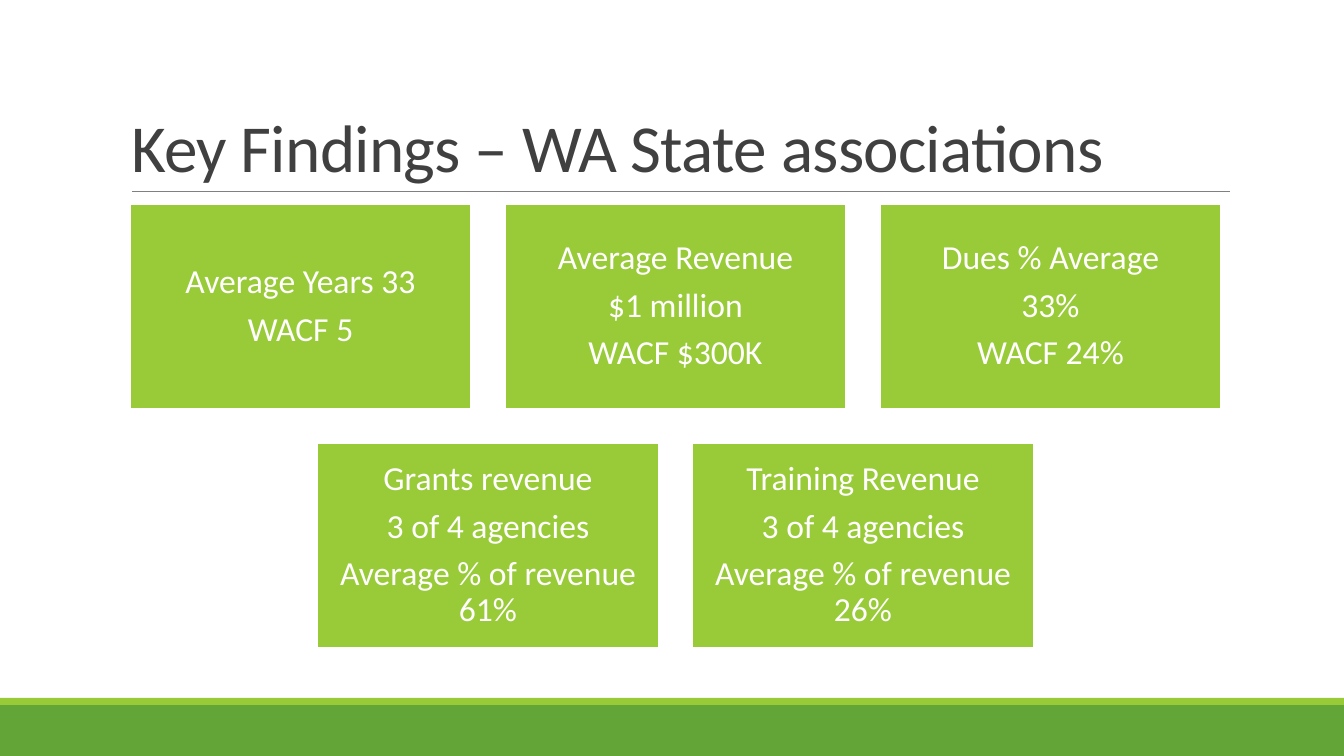
from pptx import Presentation
from pptx import util as u
from pptx.dml.color import RGBColor
from pptx.enum import shapes, text
from pptx.oxml.ns import qn
from lxml import etree

PX = 914400 / 100.8
W, H = 1344, 756
FONT = "Calibri"
COLORS = {"green": "63A537", "lime": "99CB38", "rule": "808080",
          "title": "404040", "white": "FFFFFF"}
CARD_W, CARD_H, GAP = 341, 205, 34
CARD_ROWS = [
    [["Average Years 33", "WACF 5"],
     ["Average Revenue", "$1 million", "WACF $300K"],
     ["Dues % Average", "33%", "WACF 24%"]],
    [["Grants revenue", "3 of 4 agencies", "Average % of revenue 61%"],
     ["Training Revenue", "3 of 4 agencies", "Average % of revenue 26%"]],
]


def px(n):
    return u.Emu(round(n * PX))


def color(name):
    return RGBColor.from_string(COLORS[name])


def set_font(p, size, name):
    p.font.name = FONT
    p.font.size = u.Pt(size)
    p.font.color.rgb = color(name)


def add_rect(s, x, y, w, h, fill, line=None):
    sp = s.shapes.add_shape(shapes.MSO_SHAPE.RECTANGLE, px(x), px(y), px(w), px(h))
    sp.shadow.inherit = False
    sp.fill.solid()
    sp.fill.fore_color.rgb = color(fill)
    if line:
        sp.line.color.rgb = color(line)
        sp.line.width = u.Pt(1.25)
    else:
        sp.line.fill.background()
    return sp


def add_footer(s, x, y, w, h):
    stripe = 7
    add_rect(s, x, y + stripe, w, h - stripe, "green")
    add_rect(s, x, y, w, stripe, "lime")


def add_title(s, x, y, w, h, title):
    # Title text
    sp = s.shapes.title
    sp.left, sp.top, sp.width, sp.height = px(x), px(y), px(w), px(h)
    tf = sp.text_frame
    tf.text = title
    tf.word_wrap = True
    tf.auto_size = text.MSO_AUTO_SIZE.NONE
    tf.vertical_anchor = text.MSO_ANCHOR.BOTTOM
    p = tf.paragraphs[0]
    p.alignment = text.PP_ALIGN.LEFT
    p.line_spacing = 0.85
    set_font(p, 48, "title")
    p.runs[0].font._element.set("spc", "-50")

    # Rule under the title
    rule = s.shapes.add_connector(shapes.MSO_CONNECTOR.STRAIGHT,
                                  px(x + 11), px(y + h), px(x + w + 1), px(y + h))
    rule.line.color.rgb = color("rule")
    rule.line.width = u.Pt(0.5)
    etree.SubElement(rule._element.spPr, qn("a:effectLst"))


def add_card(s, x, y, w, h, lines):
    tf = add_rect(s, x, y, w, h, "lime", "white").text_frame
    tf.word_wrap = True
    tf.vertical_anchor = text.MSO_ANCHOR.MIDDLE
    tf.margin_left = tf.margin_right = tf.margin_top = tf.margin_bottom = px(10)
    tf.text = "\n".join(lines)
    for p in tf.paragraphs:
        p.alignment = text.PP_ALIGN.CENTER
        p.line_spacing = 0.9
        p.space_after = u.Pt(8)
        set_font(p, 24, "white")


def add_cards(s, x, y, w, rows):
    # Each row is centred in the width
    for i, row in enumerate(rows):
        row_w = len(row) * (CARD_W + GAP) - GAP
        left = x + (w - row_w) / 2
        for j, lines in enumerate(row):
            add_card(s, left + j * (CARD_W + GAP), y + i * (CARD_H + GAP),
                     CARD_W, CARD_H, lines)


def main():
    prs = Presentation()
    prs.slide_width, prs.slide_height = px(W), px(H)
    s = prs.slides.add_slide(prs.slide_layouts[5])
    add_footer(s, 0, 698, W, H - 698)
    add_title(s, 121, 31, 1108, 160, "Key Findings – WA State associations")
    add_cards(s, 130, 204, 1091, CARD_ROWS)
    prs.save("out.pptx")


if __name__ == "__main__":
    main()
